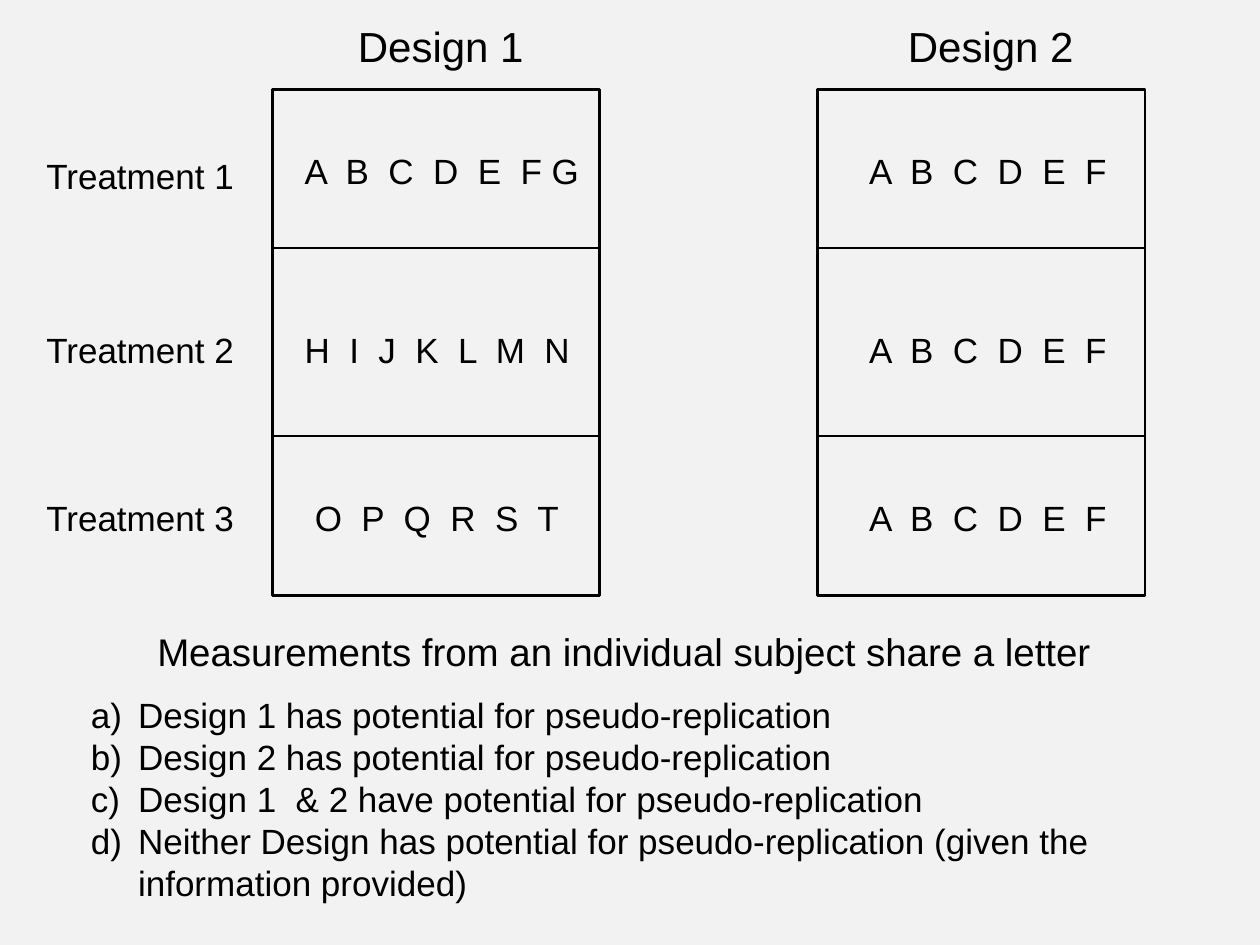
from pptx import Presentation
from pptx.dml.color import RGBColor
from pptx.enum.shapes import MSO_CONNECTOR as CONN, MSO_SHAPE as SHAPE
from pptx.enum.text import MSO_ANCHOR as ANCHOR
from pptx.oxml.ns import qn
from pptx.util import Pt
from lxml.etree import SubElement

COLORS = {"background": "F2F2F2", "ink": "000000"}
FONT = "Arial"
BODY_SIZE = 20

FRAME_TOP, FRAME_W, FRAME_H = 51, 187.2, 289.2
DIVIDERS = [141.8, 249.1]
ROW_TOPS = [184.3, 280]
LABEL_TOPS = [85, *ROW_TOPS]
LETTER_TOPS = [82, *ROW_TOPS]

TREATMENTS = ["Treatment 1", "Treatment 2", "Treatment 3"]
DESIGNS = [
    {"name": "Design 1", "name_left": 197.4, "frame_left": 155.6,
     "rows": [("A  B  C  D  E  F G", 167, 179.3),
              ("H  I  J  K  L  M  N", 167, 167.8),
              ("O  P  Q  R  S  T", 172.8, 154.8)]},
    {"name": "Design 2", "name_left": 511.7, "frame_left": 467.2,
     "rows": [("A  B  C  D  E  F", 489.6, 152.6)] * 3},
]
STATEMENT = "Measurements from an individual subject share a letter"
ANSWERS = [
    "Design 1 has potential for pseudo-replication",
    "Design 2 has potential for pseudo-replication",
    "Design 1  & 2 have potential for pseudo-replication",
    "Neither Design has potential for pseudo-replication (given the information provided)",
]


def rgb(name):
    return RGBColor.from_string(COLORS[name])


def add_text(lines, left, top, width, height, size=BODY_SIZE, wrap=False):
    tf = s.shapes.add_textbox(Pt(left), Pt(top), Pt(width), Pt(height)).text_frame
    tf.word_wrap = wrap
    tf.text = "\n".join(lines)
    for p in tf.paragraphs:
        for r in p.runs:
            r.font.name = FONT
            r.font.size = Pt(size)
            r.font.color.rgb = rgb("ink")
    return tf


def set_line(sp):
    sp.line.color.rgb = rgb("ink")
    sp.line.width = Pt(1.5)


def add_frame(left):
    group = s.shapes.add_group_shape()
    box = group.shapes.add_shape(SHAPE.RECTANGLE, Pt(left), Pt(FRAME_TOP),
                                 Pt(FRAME_W), Pt(FRAME_H))
    box.shadow.inherit = False
    box.fill.background()
    set_line(box)
    for y in DIVIDERS:
        divider = group.shapes.add_connector(CONN.STRAIGHT, Pt(left), Pt(y),
                                             Pt(left + FRAME_W), Pt(y))
        set_line(divider)
        SubElement(divider._element.spPr, qn("a:effectLst"))


def number_paragraphs(tf):
    for p in tf.paragraphs:
        pPr = p._p.get_or_add_pPr()
        pPr.set("marL", str(Pt(27)))
        pPr.set("indent", str(Pt(-27)))
        SubElement(pPr, qn("a:buFont"), typeface=FONT)
        SubElement(pPr, qn("a:buAutoNum"), type="alphaLcParenR")


prs = Presentation()
prs.slide_width, prs.slide_height = Pt(720), Pt(540)
s = prs.slides.add_slide(prs.slide_layouts[6])
s.background.fill.solid()
s.background.fill.fore_color.rgb = rgb("background")

for label, top in zip(TREATMENTS, LABEL_TOPS):
    add_text([label], 19.4, top, 122.4, 31.5)

for design in DESIGNS:
    tf = add_text([design["name"]], design["name_left"], 8, 130, 36, size=24, wrap=True)
    tf.vertical_anchor = ANCHOR.MIDDLE
    add_frame(design["frame_left"])
    for (letters, left, width), top in zip(design["rows"], LETTER_TOPS):
        add_text([letters], left, top, width, 31.5)

add_text([STATEMENT], 82.8, 355.3, 554.4, 33.8, size=22)
number_paragraphs(add_text(ANSWERS, 44.8, 392.7, 630, 128.2, wrap=True))

prs.save("out.pptx")
